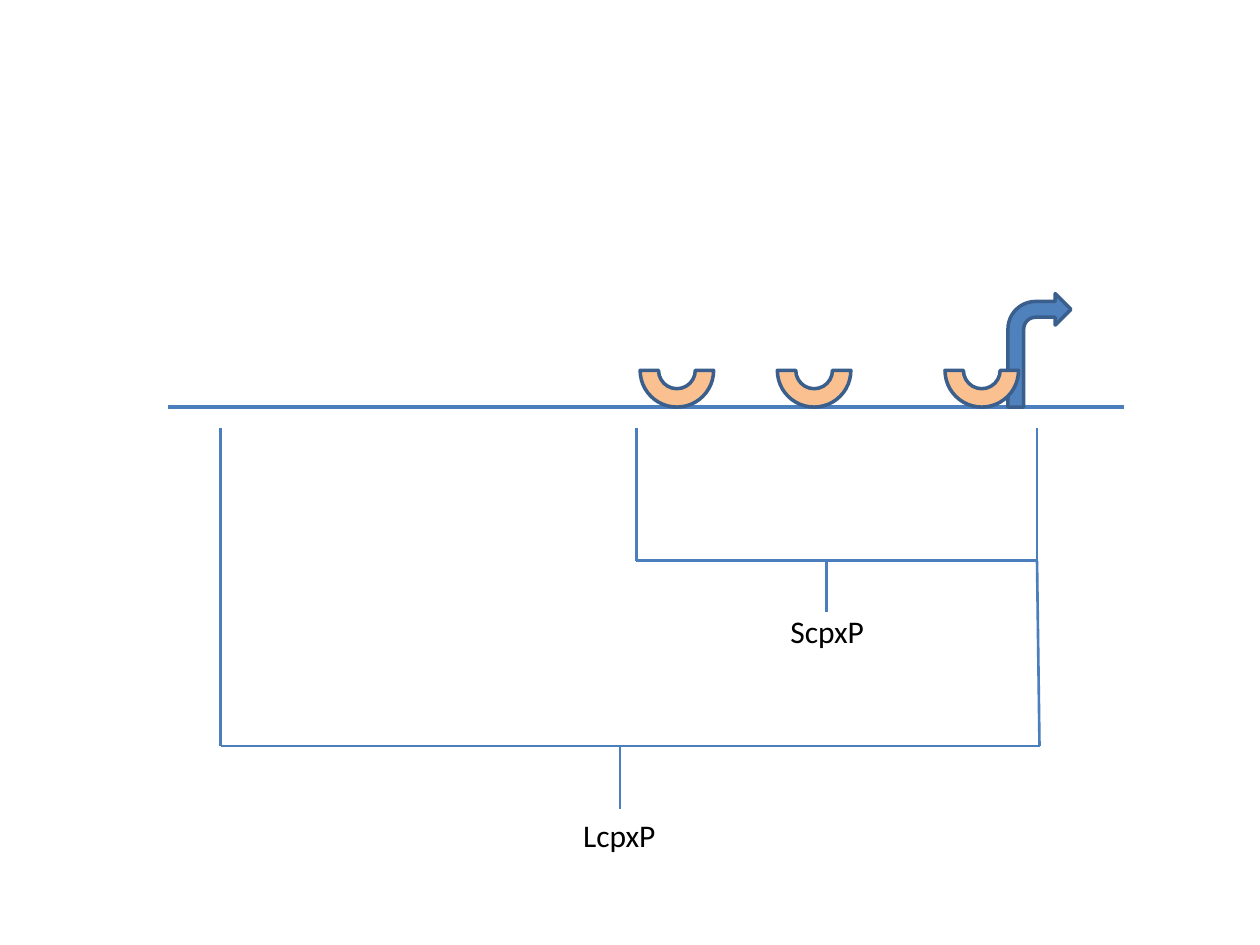
import pptx
import pptx.util
import pptx.dml.color
import pptx.enum.shapes
import pptx.enum.text
import pptx.oxml.ns

Pt = pptx.util.Pt
SHAPE = pptx.enum.shapes.MSO_SHAPE
COLORS = {"line": "4B7EBC", "outline": "3A5F8C", "arrow": "4F81BD",
          "site": "FAC090", "text": "000000"}

# Horizontal and vertical guides of the promoter map
DNA_Y, TICK_Y, SHORT_Y, LONG_Y = 232.6, 244.8, 320.4, 426.2
LONG_X, SHORT_X, END_X, LONG_END_X = 126, 363.6, 592.6, 594
SHORT_STEM_X, LONG_STEM_X = 472.3, 354.2

SITE_SIZE = 42
SITE_LEFTS = [365.8, 444.2, 540]
START_ARROW = (576, 167.8, 36, 64.8)

DNA = [(96, DNA_Y, 642.2, DNA_Y)]
SHORT_BRACKET = [
    (END_X, TICK_Y, END_X, SHORT_Y),
    (SHORT_X, TICK_Y, SHORT_X, SHORT_Y),
    (END_X, SHORT_Y, SHORT_X, SHORT_Y),
    (SHORT_STEM_X, SHORT_Y, SHORT_STEM_X, 349.9),
]
LONG_BRACKET = [
    (END_X, SHORT_Y, LONG_END_X, LONG_Y),
    (LONG_END_X, LONG_Y, LONG_X, LONG_Y),
    (LONG_X, LONG_Y, LONG_X, TICK_Y),
]
LONG_STEM = [(LONG_STEM_X, 462.2, LONG_STEM_X, LONG_Y)]
SHORT_LABEL = ("ScpxP", (393.1, 346.3, 159.1, 29))
LONG_LABEL = ("LcpxP", (308.9, 463, 90, 29))


def rgb(name):
    return pptx.dml.color.RGBColor.from_string(COLORS[name])


def add_lines(shapes, lines, width):
    for ends in lines:
        c = shapes.add_connector(pptx.enum.shapes.MSO_CONNECTOR.STRAIGHT,
                                 *map(Pt, ends))
        c.line.color.rgb = rgb("line")
        c.line.width = Pt(width)
        c._element.spPr.append(
            pptx.oxml.parse_xml("<a:effectLst %s/>" % pptx.oxml.ns.nsdecls("a")))


def add_shape(shapes, kind, box, fill, rotation=0):
    sp = shapes.add_shape(kind, *map(Pt, box))
    sp.rotation = rotation
    sp.shadow.inherit = False
    sp.fill.solid()
    sp.fill.fore_color.rgb = rgb(fill)
    sp.line.color.rgb = rgb("outline")
    sp.line.width = Pt(2)


def add_label(shapes, text, box):
    tf = shapes.add_textbox(*map(Pt, box)).text_frame
    tf.word_wrap = True
    tf.auto_size = pptx.enum.text.MSO_AUTO_SIZE.SHAPE_TO_FIT_TEXT
    p = tf.paragraphs[0]
    p.alignment = pptx.enum.text.PP_ALIGN.CENTER
    r = p.add_run()
    r.text = text
    for name, value in {"name": "Calibri", "size": Pt(18)}.items():
        setattr(r.font, name, value)
    r.font.color.rgb = rgb("text")


def main():
    prs = pptx.Presentation()
    prs.slide_width, prs.slide_height = Pt(720), Pt(540)
    s = prs.slides.add_slide(prs.slide_layouts[6])

    promoter = s.shapes.add_group_shape().shapes
    add_lines(promoter, DNA, 2)
    add_shape(promoter, SHAPE.BENT_ARROW, START_ARROW, "arrow")
    for left in SITE_LEFTS:
        box = (left, DNA_Y - SITE_SIZE, SITE_SIZE, SITE_SIZE)
        add_shape(promoter, SHAPE.BLOCK_ARC, box, "site", 180)

    short = s.shapes.add_group_shape().shapes
    add_lines(short, SHORT_BRACKET, 1.5)
    add_label(short, *SHORT_LABEL)

    add_lines(s.shapes.add_group_shape().shapes, LONG_BRACKET, 1.5)
    add_lines(s.shapes, LONG_STEM, 1.5)
    add_label(s.shapes, *LONG_LABEL)
    prs.save("out.pptx")


if __name__ == "__main__":
    main()
